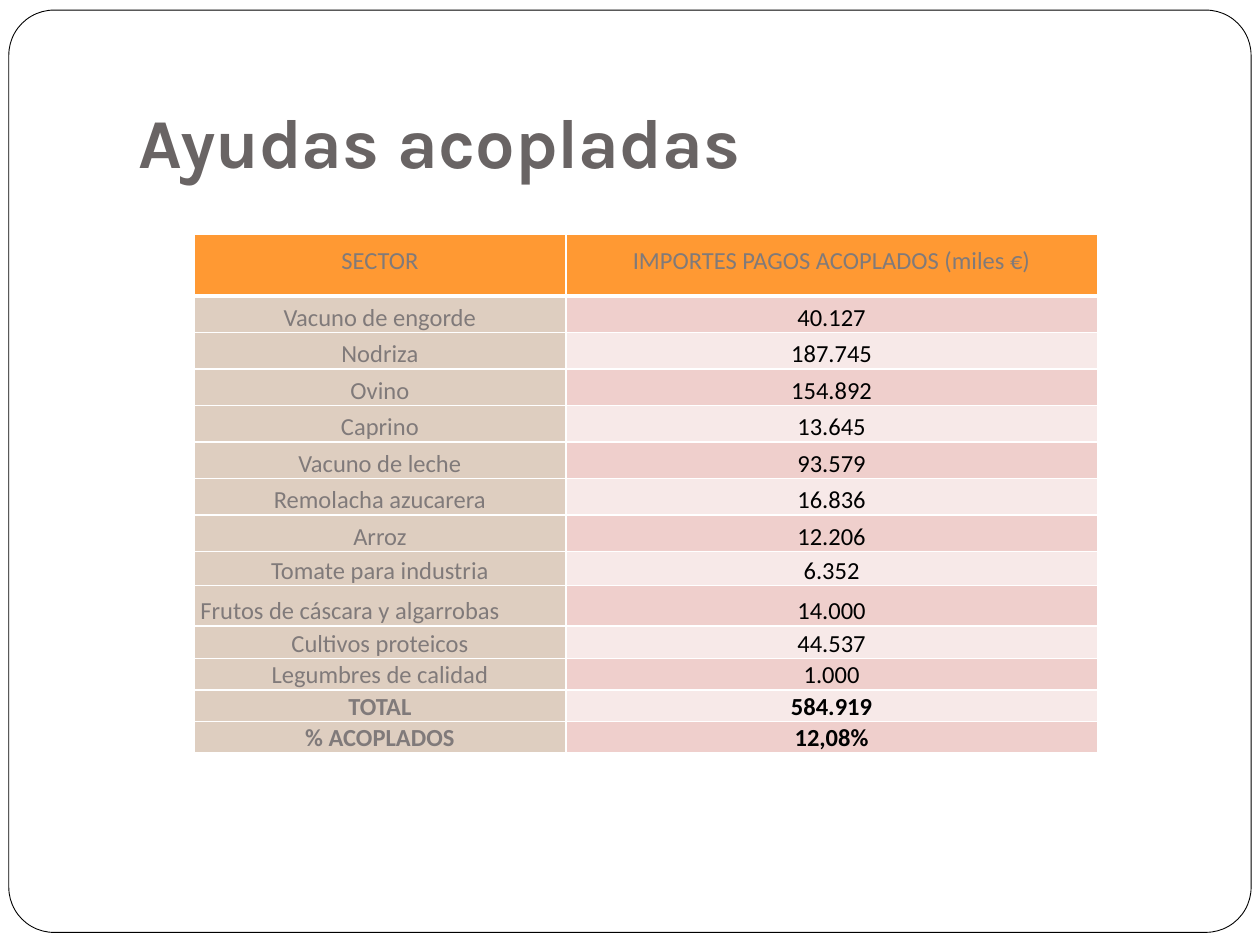
from dataclasses import dataclass

from lxml.etree import SubElement
from pptx import Presentation
from pptx.dml.color import RGBColor
from pptx.enum.shapes import MSO_SHAPE
from pptx.enum.text import MSO_ANCHOR, MSO_AUTO_SIZE, PP_ALIGN
from pptx.oxml.ns import qn
from pptx.util import Inches, Pt

COLORS = {
    "white": "FFFFFF",
    "black": "000000",
    "title": "696464",
    "label": "807A7A",
    "header": "FF9933",
    "sector": "DECEC0",
    "odd": "EFCFCC",
    "even": "F7E9E8",
}
COLUMN_WIDTHS = (2.95, 4.22)


@dataclass
class Row:
    sector: str
    amount: str
    height: float = 0.29
    bold: bool = False
    align: PP_ALIGN = PP_ALIGN.CENTER


HEADER = Row("SECTOR", "IMPORTES PAGOS ACOPLADOS (miles €)", 0.49)
ROWS = [
    Row("Vacuno de engorde", "40.127"),
    Row("Nodriza", "187.745"),
    Row("Ovino", "154.892"),
    Row("Caprino", "13.645"),
    Row("Vacuno de leche", "93.579"),
    Row("Remolacha azucarera", "16.836"),
    Row("Arroz", "12.206"),
    Row("Tomate para industria", "6.352", 0.27),
    Row("Frutos de cáscara y algarrobas", "14.000", 0.32, align=PP_ALIGN.LEFT),
    Row("Cultivos proteicos", "44.537", 0.26),
    Row("Legumbres de calidad", "1.000", 0.25),
    Row("TOTAL", "584.919", 0.25, bold=True),
    Row("% ACOPLADOS", "12,08%", 0.25, bold=True),
]


def color(name: str) -> RGBColor:
    return RGBColor.from_string(COLORS[name])


def set_borders(cell, bottom: float) -> None:
    """Draw white cell borders, one point wide except at the bottom."""
    properties = cell._tc.get_or_add_tcPr()
    widths = {"lnL": 1, "lnR": 1, "lnT": 1, "lnB": bottom}
    for position, (side, width) in enumerate(widths.items()):
        line = SubElement(properties, qn(f"a:{side}"), w=str(Pt(width)))
        fill = SubElement(line, qn("a:solidFill"))
        SubElement(fill, qn("a:srgbClr"), val=COLORS["white"])
        properties.insert(position, line)


def fill_cell(cell, text: str, fill: str, font_color: str, bold: bool = False,
              align: PP_ALIGN = PP_ALIGN.CENTER,
              anchor: MSO_ANCHOR = MSO_ANCHOR.BOTTOM, bottom: float = 1) -> None:
    cell.fill.solid()
    cell.fill.fore_color.rgb = color(fill)
    cell.margin_left = cell.margin_right = Inches(0.05)
    cell.margin_top = cell.margin_bottom = 0
    cell.vertical_anchor = anchor
    set_borders(cell, bottom)

    cell.text_frame.text = text
    para = cell.text_frame.paragraphs[0]
    para.alignment = align
    para.line_spacing = Pt(12)
    font = para.runs[0].font
    font.name, font.size, font.bold = "Calibri", Pt(14), bold
    font.color.rgb = color(font_color)


def add_frame(page) -> None:
    frame = page.shapes.add_shape(MSO_SHAPE.ROUNDED_RECTANGLE, Inches(0.07),
                                  Inches(0.08), Inches(9.86), Inches(7.32))
    frame.adjustments[0] = 0.049
    frame.shadow.inherit = False
    frame.fill.solid()
    frame.fill.fore_color.rgb = color("white")
    frame.line.color.rgb = color("black")
    frame.line.width = Pt(0.5)
    # Send the frame behind the title
    page.shapes.title.element.addprevious(frame.element)


def set_title(page, text: str) -> None:
    title = page.shapes.title
    title.left, title.top = Inches(1), Inches(0.3)
    title.width, title.height = Inches(8.5), Inches(1.25)
    text_frame = title.text_frame
    text_frame.text = text
    text_frame.word_wrap = True
    text_frame.auto_size = MSO_AUTO_SIZE.NONE
    text_frame.vertical_anchor = MSO_ANCHOR.BOTTOM
    text_frame.margin_left = text_frame.margin_right = Inches(0.1)
    text_frame.margin_top, text_frame.margin_bottom = Inches(0.05), Inches(0.1)
    para = text_frame.paragraphs[0]
    para.alignment = PP_ALIGN.LEFT
    font = para.runs[0].font
    font.name, font.size, font.bold = "Karla", Pt(40), True
    font.color.rgb = color("title")


def add_payments_table(page) -> None:
    rows = [HEADER, *ROWS]
    table = page.shapes.add_table(
        len(rows), len(COLUMN_WIDTHS), Inches(1.54), Inches(1.86),
        Inches(sum(COLUMN_WIDTHS)), Inches(sum(row.height for row in rows)),
    ).table
    for column, width in zip(table.columns, COLUMN_WIDTHS):
        column.width = Inches(width)
    for table_row, row in zip(table.rows, rows):
        table_row.height = Inches(row.height)

    # Header row
    for index, text in enumerate((HEADER.sector, HEADER.amount)):
        fill_cell(table.cell(0, index), text, "header", "label",
                  anchor=MSO_ANCHOR.MIDDLE, bottom=3)

    # Sector rows with banded amounts
    for index, row in enumerate(ROWS, start=1):
        band = "odd" if index % 2 else "even"
        fill_cell(table.cell(index, 0), row.sector, "sector", "label",
                  row.bold, row.align)
        fill_cell(table.cell(index, 1), row.amount, band, "black", row.bold)


def main() -> None:
    deck = Presentation()
    deck.slide_width, deck.slide_height = Inches(10), Inches(7.5)
    page = deck.slides.add_slide(deck.slide_layouts[5])
    add_frame(page)
    set_title(page, "Ayudas acopladas")
    add_payments_table(page)
    deck.save("out.pptx")


if __name__ == "__main__":
    main()
